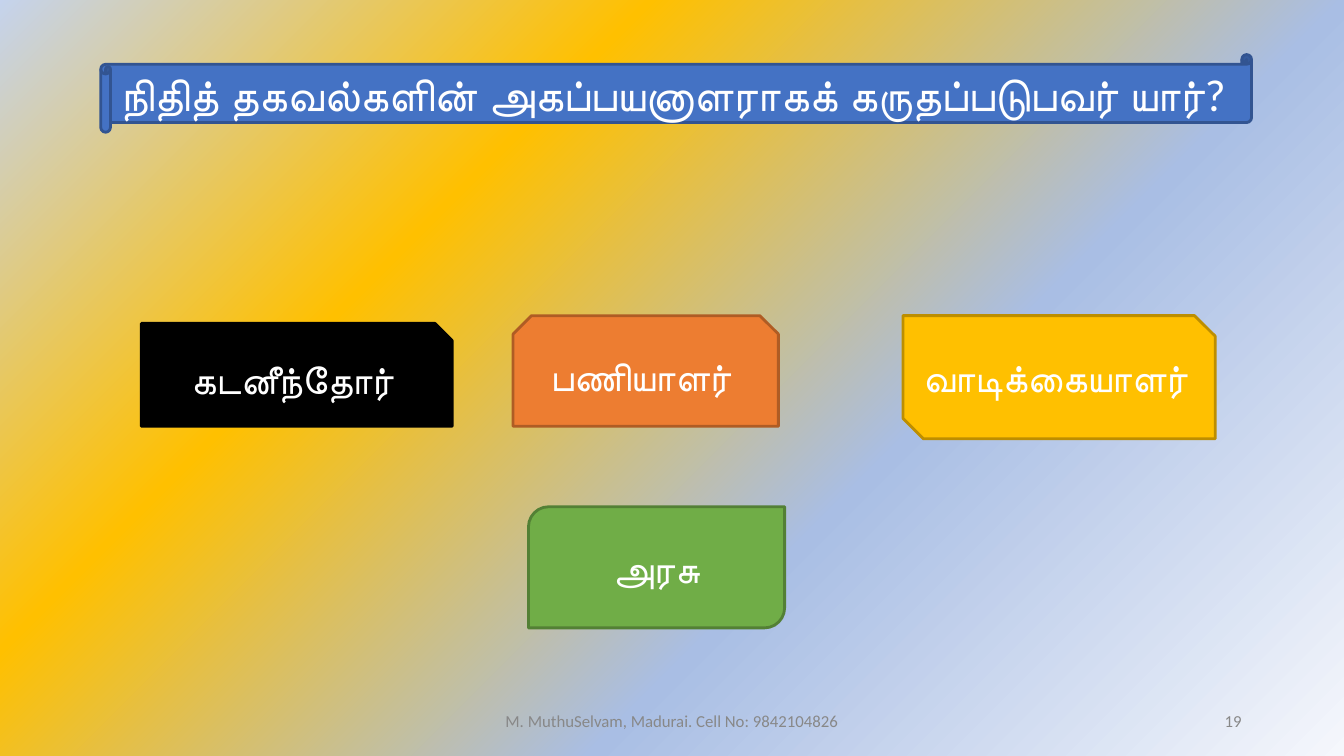
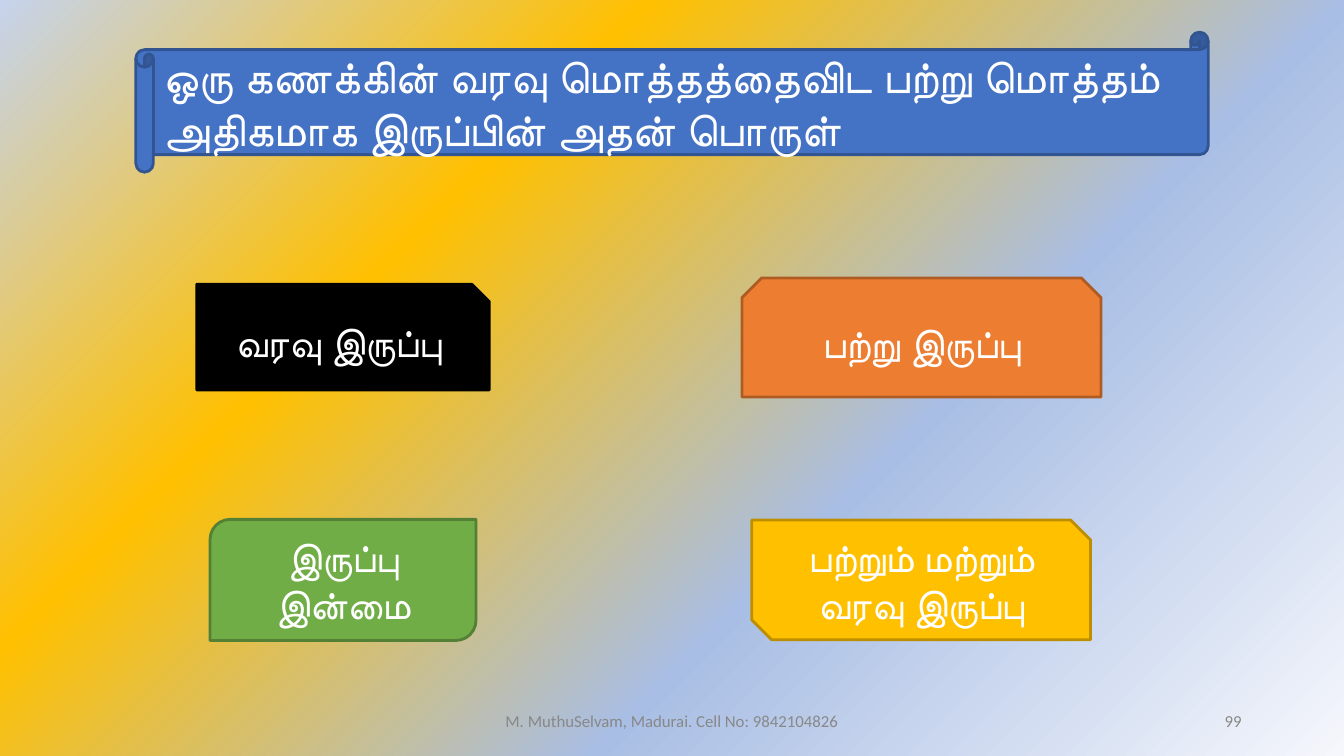
from pptx import Presentation
from pptx.dml.color import RGBColor
from pptx.enum.shapes import MSO_SHAPE
from pptx.enum.text import MSO_ANCHOR, PP_ALIGN
from pptx.oxml import parse_xml
from pptx.oxml.ns import nsdecls
from pptx.util import Pt

FONT = "Calibri"
WHITE = "FFFFFF"
GREY = "888888"
BACKGROUND_STOPS = [(0, "F5F7FC"), (36, "A9BEE4"), (69, "FFC000"), (100, "C5D3ED")]
SLIDE_SIZE = (960, 540)
FOOTER_BOX = (318, 500.5, 324, 29)
NUMBER_BOX = (678, 500.5, 216, 29)
FOOTER = "M. MuthuSelvam, Madurai. Cell No: 9842104826"

QUESTION_STYLE = (MSO_SHAPE.HORIZONTAL_SCROLL, "4472C4", "325491")
ANSWER_STYLES = {
    "black": (MSO_SHAPE.SNIP_1_RECTANGLE, "000000", "000000"),
    "orange": (MSO_SHAPE.SNIP_2_SAME_RECTANGLE, "ED7D31", "AF5C24"),
    "gold": (MSO_SHAPE.SNIP_2_DIAG_RECTANGLE, "FFC000", "BD8E00"),
    "green": (MSO_SHAPE.ROUND_2_DIAG_RECTANGLE, "70AD47", "538035"),
}

QUIZ = [
    {
        "number": 19,
        "question": "நிதித் தகவல்களின் அகப்பயனாளராகக் கருதப்படுபவர் யார்?",
        "box": (72, 39, 822, 55.5),
        "answers": [
            ("black", "கடனீந்தோர்", (101, 231, 222, 73.5), PP_ALIGN.CENTER),
            ("orange", "பணியாளர் ", (366.5, 225.5, 189.5, 79), PP_ALIGN.CENTER),
            ("gold", "வாடிக்கையாளர்", (645, 225.5, 223, 88), PP_ALIGN.LEFT),
            ("green", "அரசு", (377.5, 362, 183, 86.5), PP_ALIGN.CENTER),
        ],
    },
    {
        "number": 99,
        "question": "ஒரு கணக்கின் வரவு மொத்தத்தைவிட பற்று மொத்தம் "
                    "அதிகமாக இருப்பின் அதன் பொருள்",
        "box": (97, 23, 766, 100),
        "answers": [
            ("black", "வரவு இருப்பு", (140.5, 203, 209, 75.5), PP_ALIGN.CENTER),
            ("orange", "பற்று இருப்பு", (530, 198.5, 256.5, 85), PP_ALIGN.CENTER),
            ("gold", "பற்றும் மற்றும் வரவு இருப்பு", (537, 371.5, 242, 85.5), PP_ALIGN.CENTER),
            ("green", "இருப்பு இன்மை", (150, 371, 190, 86.5), PP_ALIGN.CENTER),
        ],
    },
]


def rgb(value):
    return RGBColor.from_string(value)


def points(box):
    return [Pt(length) for length in box]


def write(frame, text, size, color, align):
    frame.word_wrap = True
    frame.vertical_anchor = MSO_ANCHOR.MIDDLE
    paragraph = frame.paragraphs[0]
    paragraph.text = text
    paragraph.alignment = align
    paragraph.font.name = FONT
    paragraph.font.size = Pt(size)
    paragraph.font.color.rgb = rgb(color)


def paint_background(master):
    master.background.fill.solid()
    properties = master.element.xpath(".//p:bgPr")[0]
    stops = "".join(
        f'<a:gs pos="{percent * 1000}"><a:srgbClr val="{color}"/></a:gs>'
        for percent, color in BACKGROUND_STOPS
    )
    gradient = parse_xml(
        f'<a:gradFill {nsdecls("a")} rotWithShape="1"><a:gsLst>{stops}</a:gsLst>'
        '<a:path path="circle"><a:fillToRect l="100000" t="100000"/></a:path>'
        '<a:tileRect r="-100000" b="-100000"/></a:gradFill>'
    )
    properties.replace(properties[0], gradient)


def add_card(slide, box, style, text, size, align):
    outline, fill, border = style
    card = slide.shapes.add_shape(outline, *points(box))
    card.shadow.inherit = False
    card.fill.solid()
    card.fill.fore_color.rgb = rgb(fill)
    card.line.color.rgb = rgb(border)
    card.line.width = Pt(2)
    write(card.text_frame, text, size, WHITE, align)


def add_footer(slide, number):
    for box, text, align in (
        (FOOTER_BOX, FOOTER, PP_ALIGN.CENTER),
        (NUMBER_BOX, str(number), PP_ALIGN.RIGHT),
    ):
        label = slide.shapes.add_textbox(*points(box))
        write(label.text_frame, text, 12, GREY, align)


def add_quiz_slide(presentation, quiz):
    slide = presentation.slides.add_slide(presentation.slide_layouts[6])
    add_card(slide, quiz["box"], QUESTION_STYLE, quiz["question"], 32, PP_ALIGN.LEFT)
    for style, text, box, align in quiz["answers"]:
        add_card(slide, box, ANSWER_STYLES[style], text, 28, align)
    add_footer(slide, quiz["number"])


def main():
    presentation = Presentation()
    presentation.slide_width, presentation.slide_height = points(SLIDE_SIZE)
    paint_background(presentation.slide_master)
    for quiz in QUIZ:
        add_quiz_slide(presentation, quiz)
    presentation.save("out.pptx")


if __name__ == "__main__":
    main()
